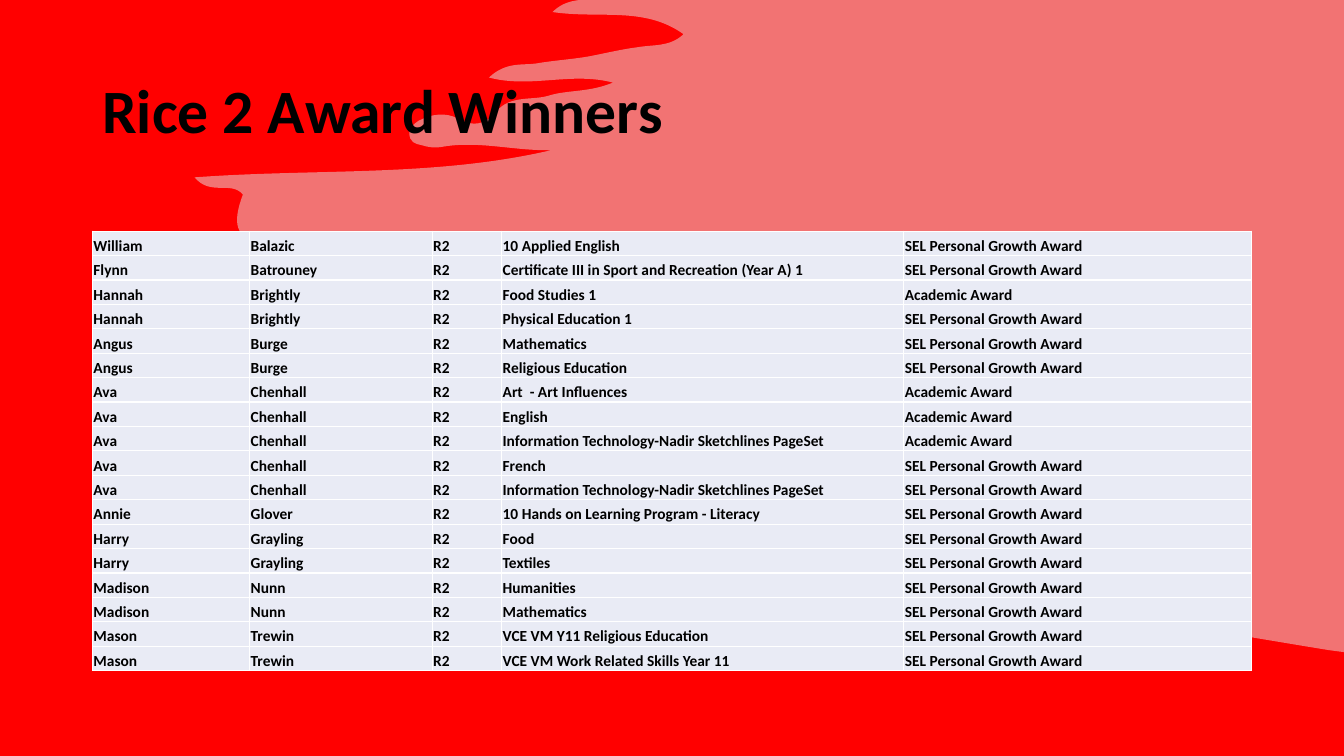
import lxml.etree
import pptx
import pptx.dml.color
import pptx.enum.text
import pptx.oxml.ns
import pptx.util

WIDTH, HEIGHT = 13.33, 7.5
FONT = "Calibri"
RED, BLUSH, BLACK, WHITE, CELL = "FF0000", "E7E6E6", "000000", "FFFFFF", "E9EBF5"

BRUSH_START = (5.75, 0)
BRUSH_CURVES = [
    (5.67, 0.01, 5.57, 0.03, 5.48, 0.12), (5.95, 0.19, 6.39, 0.06, 6.78, 0.34),
    (6.64, 0.47, 6.48, 0.44, 6.32, 0.47), (6.16, 0.49, 6, 0.53, 5.84, 0.56),
    (5.67, 0.59, 5.49, 0.6, 5.32, 0.63), (5.18, 0.65, 5.02, 0.61, 4.85, 0.77),
    (5.27, 0.88, 5.66, 0.71, 6.08, 0.82), (5.84, 0.92, 5.63, 0.89, 5.44, 0.95),
    (5.27, 1, 5.06, 0.94, 4.92, 1.11), (4.81, 1.24, 4.69, 1.26, 4.55, 1.18),
    (4.42, 1.11, 4.28, 1.13, 4.15, 1.2), (4.11, 1.23, 4.06, 1.26, 4.06, 1.32),
    (4.06, 1.41, 4.12, 1.43, 4.18, 1.44), (4.24, 1.46, 4.31, 1.47, 4.37, 1.46),
    (4.74, 1.39, 5.1, 1.5, 5.47, 1.49), (4.31, 1.76, 3.14, 1.67, 1.93, 1.76),
    (2.09, 1.95, 2.29, 1.79, 2.41, 1.93), (2.3, 2.22, 2.34, 2.37, 2.58, 2.39),
    (2.8, 2.41, 3.04, 2.31, 3.16, 2.65), (3.2, 2.76, 3.41, 2.73, 3.55, 2.75),
    (3.84, 2.79, 4.14, 2.75, 4.42, 2.88), (4.53, 2.93, 4.6, 2.97, 4.55, 3.11),
    (4.49, 3.25, 4.56, 3.3, 4.66, 3.36), (4.73, 3.4, 4.83, 3.39, 4.89, 3.52),
    (4.28, 3.5, 3.69, 3.4, 3.09, 3.5), (3.75, 3.74, 4.47, 3.73, 5.12, 4.02),
    (5.1, 4.12, 4.95, 4.07, 4.94, 4.22), (5.28, 4.38, 5.69, 4.27, 6.05, 4.5),
    (5.84, 4.61, 5.65, 4.44, 5.45, 4.54), (5.52, 4.69, 8.4, 5.61, 8.92, 5.71),
    (9.78, 5.87, 11.95, 6.25, 13.18, 6.45),
]
BRUSH_END = [(WIDTH, 6.47), (WIDTH, 0)]

COLUMNS = [1.56, 1.81, 0.69, 3.99, 3.45]
HOUSE = "R2"
GROWTH, ACADEMIC = "SEL Personal Growth Award", "Academic Award"
DESIGN = "Information Technology-Nadir Sketchlines PageSet"
WINNERS = [
    ("William", "Balazic", "10 Applied English", GROWTH),
    ("Flynn", "Batrouney", "Certificate III in Sport and Recreation (Year A) 1", GROWTH),
    ("Hannah", "Brightly", "Food Studies 1", ACADEMIC),
    ("Hannah", "Brightly", "Physical Education 1", GROWTH),
    ("Angus", "Burge", "Mathematics", GROWTH),
    ("Angus", "Burge", "Religious Education", GROWTH),
    ("Ava", "Chenhall", "Art  - Art Influences", ACADEMIC),
    ("Ava", "Chenhall", "English", ACADEMIC),
    ("Ava", "Chenhall", DESIGN, ACADEMIC),
    ("Ava", "Chenhall", "French", GROWTH),
    ("Ava", "Chenhall", DESIGN, GROWTH),
    ("Annie", "Glover", "10 Hands on Learning Program - Literacy", GROWTH),
    ("Harry", "Grayling", "Food", GROWTH),
    ("Harry", "Grayling", "Textiles", GROWTH),
    ("Madison", "Nunn", "Humanities", GROWTH),
    ("Madison", "Nunn", "Mathematics", GROWTH),
    ("Mason", "Trewin", "VCE VM Y11 Religious Education", GROWTH),
    ("Mason", "Trewin", "VCE VM Work Related Skills Year 11", GROWTH),
]


def paint(fill, color):
    fill.solid()
    fill.fore_color.rgb = pptx.dml.color.RGBColor.from_string(color)


def share(prs, left, top, width, height):
    w, h = prs.slide_width / 100, prs.slide_height / 100
    return round(left * w), round(top * h), round(width * w), round(height * h)


def add_run(p, text, size):
    r = p.add_run()
    r.text = text
    r.font.name = FONT
    r.font.size = pptx.util.Pt(size)
    r.font.bold = True
    paint(r.font.fill, BLACK)


def bend_lines(sp, count):
    qn = pptx.oxml.ns.qn
    lines = list(sp._element.iter(qn("a:lnTo")))
    for i in range(0, 3 * count, 3):
        curve = lxml.etree.Element(qn("a:cubicBezTo"))
        lines[i].addprevious(curve)
        for line in lines[i:i + 3]:
            curve.append(line[0])
            line.getparent().remove(line)


def add_brush(slide, box):
    left, top, width, height = box

    def place(x, y):
        return left + x * width / WIDTH, top + y * height / HEIGHT

    controls = [c[i:i + 2] for c in BRUSH_CURVES for i in (0, 2, 4)]
    builder = slide.shapes.build_freeform(*place(*BRUSH_START))
    builder.add_line_segments([place(x, y) for x, y in controls + BRUSH_END], close=True)
    sp = builder.convert_to_shape()
    bend_lines(sp, len(BRUSH_CURVES))
    sp.shadow.inherit = False
    sp.line.fill.background()
    paint(sp.fill, BLUSH)
    color = sp.fill._xPr.find(".//" + pptx.oxml.ns.qn("a:srgbClr"))
    lxml.etree.SubElement(color, pptx.oxml.ns.qn("a:alpha"), val="50000")


def add_title(slide, box, text):
    tf = slide.shapes.add_textbox(*box).text_frame
    tf.word_wrap = True
    tf.vertical_anchor = pptx.enum.text.MSO_ANCHOR.MIDDLE
    p = tf.paragraphs[0]
    p.line_spacing = 0.9
    add_run(p, text, 44)


def add_borders(cell):
    qn = pptx.oxml.ns.qn
    tc_pr = cell._tc.get_or_add_tcPr()
    for i, side in enumerate(("lnL", "lnR", "lnT", "lnB")):
        ln = lxml.etree.Element(qn("a:" + side), w=str(pptx.util.Pt(1)))
        fill = lxml.etree.SubElement(ln, qn("a:solidFill"))
        lxml.etree.SubElement(fill, qn("a:srgbClr"), val=WHITE)
        tc_pr.insert(i, ln)


def add_winners(slide, box):
    left, top, width, height = box
    table = slide.shapes.add_table(len(WINNERS), len(COLUMNS), *box).table
    table.first_row = table.horz_banding = False
    for column, weight in zip(table.columns, COLUMNS):
        column.width = round(width * weight / sum(COLUMNS))
    for row, (first, last, subject, award) in zip(table.rows, WINNERS):
        row.height = round(height / len(WINNERS))
        for cell, text in zip(row.cells, (first, last, HOUSE, subject, award)):
            cell.margin_left = cell.margin_right = cell.margin_top = pptx.util.Inches(0.01)
            cell.margin_bottom = 0
            cell.vertical_anchor = pptx.enum.text.MSO_ANCHOR.BOTTOM
            paint(cell.fill, CELL)
            add_borders(cell)
            add_run(cell.text_frame.paragraphs[0], text, 11)


def main():
    prs = pptx.Presentation()
    prs.slide_width = pptx.util.Inches(WIDTH)
    prs.slide_height = pptx.util.Inches(HEIGHT)
    slide = prs.slides.add_slide(prs.slide_layouts[6])
    paint(slide.background.fill, RED)
    add_brush(slide, share(prs, 0, 0, 100, 100))
    add_title(slide, share(prs, 6.88, 5.33, 86.25, 19.33), "Rice 2 Award Winners")
    add_winners(slide, share(prs, 6.88, 30.59, 86.25, 58.13))
    prs.save("out.pptx")


if __name__ == "__main__":
    main()
